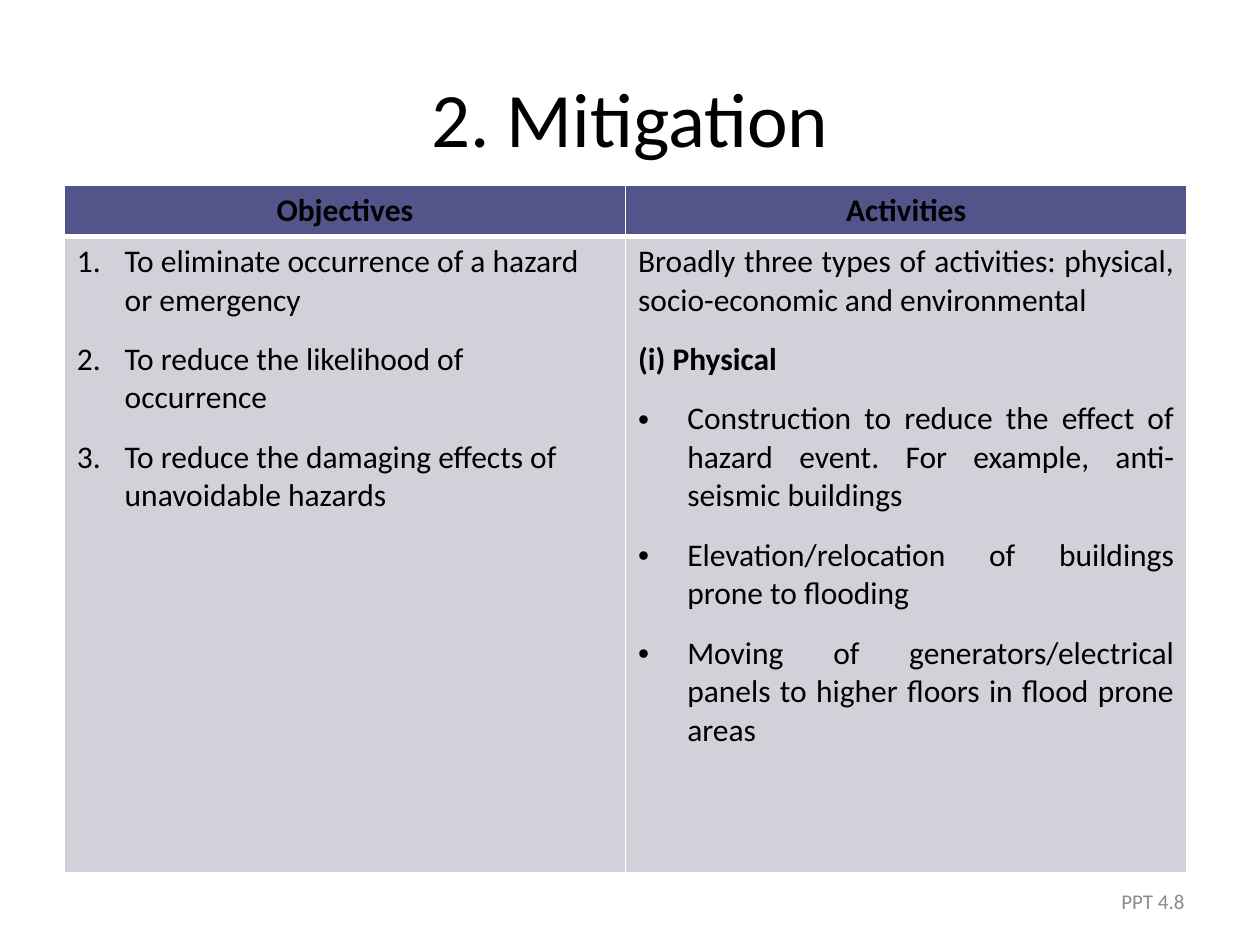
"""Build the Mitigation slide: a title, a two-column table and a slide label."""
from lxml.etree import SubElement
from pptx import Presentation
from pptx.dml.color import RGBColor
from pptx.enum.text import MSO_ANCHOR as Anchor, PP_ALIGN as Align
from pptx.oxml import parse_xml
from pptx.oxml.ns import nsdecls, qn
from pptx.util import Inches, Pt

COLORS = {"text": "000000", "header": "53548A", "body": "D1D1DA",
          "border": "FFFFFF", "label": "8C8C8C"}
FONT = "Calibri"
TITLE = "2. Mitigation"
LABEL = "PPT 4.8"
HEADERS = ["Objectives", "Activities"]
OBJECTIVES = [
    "To eliminate occurrence of a hazard or emergency",
    "To reduce the likelihood of occurrence",
    "To reduce the damaging effects of unavoidable hazards",
]
INTRODUCTION = "Broadly three types of activities: physical, socio-economic and environmental"
SUBHEADING = "(i) Physical"
ACTIVITIES = [
    "Construction to reduce the effect of hazard event. For example, anti-seismic buildings",
    "Elevation/relocation of buildings prone to flooding",
    "Moving of generators/electrical panels to higher floors in flood prone areas",
]
TABLE_LEFT, TABLE_TOP, TABLE_WIDTH = 0.51, 1.47, 8.91
ROW_HEIGHTS = [0.4, 5.05]


def add_text(frame, text, size=18, color="text", bold=False, align=Align.LEFT,
             after=0, indent=0, bullet=None):
    """Write text as the next paragraph of a text frame."""
    first = frame.paragraphs[0]
    paragraph = frame.add_paragraph() if first.runs else first
    paragraph.alignment = align
    paragraph.space_after = Pt(after)
    run = paragraph.add_run()
    run.text = text
    run.font.name, run.font.size, run.font.bold = FONT, Pt(size), bold
    run.font.color.rgb = RGBColor.from_string(COLORS[color])
    if bullet:
        properties = paragraph._p.get_or_add_pPr()
        properties.set("marL", str(Inches(indent)))
        properties.set("indent", str(-Inches(indent)))
        if bullet == "number":
            SubElement(properties, qn("a:buFont"), typeface="+mj-lt")
            SubElement(properties, qn("a:buAutoNum"), type="arabicPeriod")
        else:
            SubElement(properties, qn("a:buFont"), typeface="Arial")
            SubElement(properties, qn("a:buChar"), char=bullet)


def style_cell(cell, fill, bottom=1, top=1):
    """Fill a cell and draw its four borders."""
    cell.fill.solid()
    cell.fill.fore_color.rgb = RGBColor.from_string(COLORS[fill])
    properties = cell._tc.get_or_add_tcPr()
    widths = {"lnL": 1, "lnR": 1, "lnT": top, "lnB": bottom}
    for position, (side, width) in enumerate(widths.items()):
        properties.insert(position, parse_xml(
            f'<a:{side} {nsdecls("a")} w="{Pt(width)}"><a:solidFill>'
            f'<a:srgbClr val="{COLORS["border"]}"/></a:solidFill></a:{side}>'))


def add_table(slide):
    """Add the table of objectives and activities."""
    table = slide.shapes.add_table(
        len(ROW_HEIGHTS), len(HEADERS), Inches(TABLE_LEFT), Inches(TABLE_TOP),
        Inches(TABLE_WIDTH), Inches(sum(ROW_HEIGHTS))).table
    for row, height in zip(table.rows, ROW_HEIGHTS):
        row.height = Inches(height)
    for column, header in enumerate(HEADERS):
        style_cell(table.cell(0, column), "header", bottom=3)
        style_cell(table.cell(1, column), "body", top=3)
        add_text(table.cell(0, column).text_frame, header, bold=True,
                 align=Align.CENTER, after=12)
    objectives, activities = (cell.text_frame for cell in table.rows[1].cells)
    for text in OBJECTIVES:
        add_text(objectives, text, after=12, indent=0.38, bullet="number")
    add_text(activities, INTRODUCTION, align=Align.JUSTIFY, after=12)
    add_text(activities, SUBHEADING, bold=True, align=Align.JUSTIFY, after=12)
    for text in ACTIVITIES:
        add_text(activities, text, align=Align.JUSTIFY, after=12, indent=0.39, bullet="•")


def main():
    """Create the presentation and save it."""
    presentation = Presentation()
    presentation.slide_width, presentation.slide_height = Inches(10), Inches(7.5)
    slide = presentation.slides.add_slide(presentation.slide_layouts[5])
    title = slide.shapes.title
    title.left, title.top, title.width, title.height = map(Inches, (0.5, 0.3, 9, 1.25))
    title.text_frame.vertical_anchor = Anchor.MIDDLE
    add_text(title.text_frame, TITLE, size=44, align=Align.CENTER)
    add_table(slide)
    label = slide.shapes.add_textbox(*map(Inches, (7.17, 6.95, 2.33, 0.4))).text_frame
    label.word_wrap = True
    label.vertical_anchor = Anchor.MIDDLE
    add_text(label, LABEL, size=12, color="label", align=Align.RIGHT)
    presentation.save("out.pptx")


if __name__ == "__main__":
    main()
